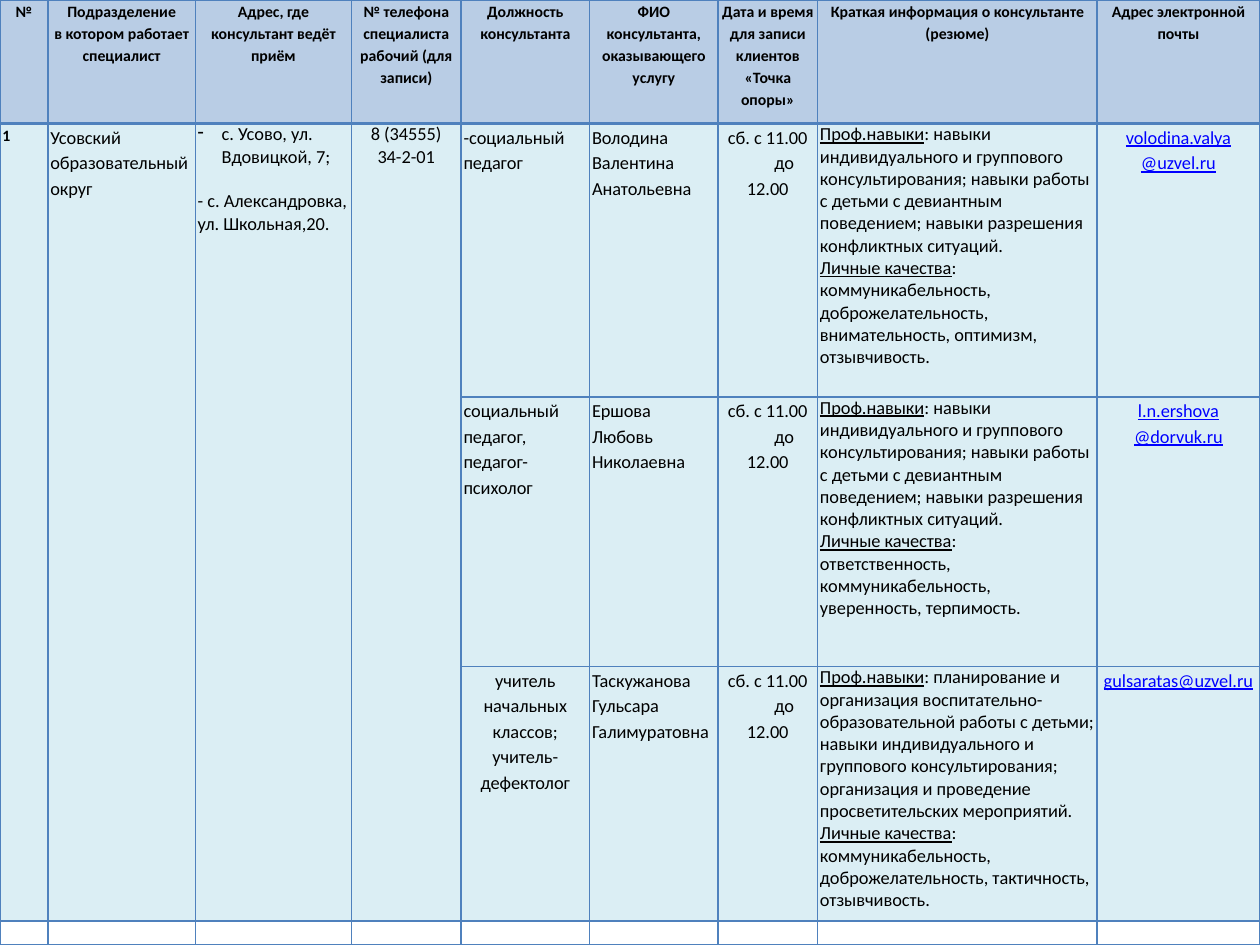
"""Build a slide with a table of consultants of an educational district."""
from dataclasses import dataclass, replace

from lxml.etree import SubElement
from pptx import Presentation
from pptx.dml.color import RGBColor
from pptx.enum.text import PP_ALIGN as Align
from pptx.oxml.ns import qn
from pptx.util import Inches, Pt

COLUMN_SHARES = (0.038, 0.117, 0.124, 0.087, 0.102, 0.102, 0.079, 0.222, 0.129)
ROW_SHARES = (0.98 / 7.5, 2.17 / 7.5, 2.14 / 7.5, 2.02 / 7.5, 0.19 / 7.5)
LINE, HEADER_FILL, BODY_FILL, EMPTY_FILL = "4F81BD", "B9CDE5", "DBEEF4", "FFFFFF"
BLACK, LINK = "000000", "0000FF"
SHARED_COLUMNS = 4


@dataclass(frozen=True)
class Line:
    text: str = ""
    label: str = ""
    align: Align = Align.LEFT
    spacing: float = 1.15
    size: float = 10.5
    bold: bool = False
    color: str = BLACK
    underline: bool = False
    bullet: str = ""
    indent: float = 0
    before: float = 0


@dataclass(frozen=True)
class Consultant:
    position: str
    name: str
    skills: str
    qualities: str
    email: tuple[str, ...]
    position_align: Align = Align.LEFT


HEADERS = (
    ("№",),
    ("Подразделение", "в котором работает специалист"),
    ("Адрес, где консультант ведёт приём",),
    ("№ телефона специалиста", "рабочий (для записи)"),
    ("Должность", "консультанта"),
    ("ФИО консультанта,", "оказывающего услугу"),
    ("Дата и время для записи клиентов", "«Точка опоры»"),
    ("Краткая информация о консультанте (резюме)",),
    ("Адрес электронной почты",),
)
COUNSELLING = (
    "навыки индивидуального и группового консультирования; навыки работы с детьми "
    "с девиантным поведением; навыки разрешения конфликтных ситуаций."
)
CONSULTANTS = (
    Consultant(
        "-социальный педагог", "Володина Валентина Анатольевна", COUNSELLING,
        "коммуникабельность, доброжелательность, внимательность, оптимизм, отзывчивость.",
        ("volodina.valya", "@uzvel.ru"),
    ),
    Consultant(
        "социальный педагог, педагог-психолог", "Ершова Любовь Николаевна", COUNSELLING,
        "ответственность, коммуникабельность, уверенность, терпимость.",
        ("l.n.ershova", "@dorvuk.ru"),
    ),
    Consultant(
        "учитель начальных классов; учитель-дефектолог", "Таскужанова Гульсара Галимуратовна",
        "планирование и организация воспитательно-образовательной работы с детьми; навыки "
        "индивидуального и группового консультирования; организация и проведение "
        "просветительских мероприятий.",
        "коммуникабельность, доброжелательность, тактичность, отзывчивость.",
        ("gulsaratas@uzvel.ru",), Align.CENTER,
    ),
)
CENTERED = Line(align=Align.CENTER)
PLAIN = Line(spacing=1.0)
DISTRICT = (
    (Line("1", size=9, bold=True),),
    (Line("Усовский образовательный округ"),),
    (
        replace(PLAIN, text="с. Усово, ул. Вдовицкой, 7;", bullet="-", indent=0.19),
        replace(PLAIN, text="- с. Александровка, ул. Школьная,20.", before=12.8),
    ),
    tuple(replace(PLAIN, text=text, align=Align.CENTER) for text in ("8 (34555)", "34-2-01")),
)
HOURS = (
    replace(CENTERED, text="сб. с 11.00"),
    replace(CENTERED, text="до", indent=0.26),
    replace(CENTERED, text="12.00"),
)


def rgb(value: str) -> RGBColor:
    """Return the colour for a hex string."""
    return RGBColor.from_string(value)


def style_cell(cell, fill: str, bottom: int = 1) -> None:
    """Set margins, borders and fill of a cell."""
    cell.margin_left = cell.margin_right = Inches(0.02)
    cell.margin_top = cell.margin_bottom = 0
    properties = cell._tc.get_or_add_tcPr()
    for side, width in (("L", 1), ("R", 1), ("T", 1), ("B", bottom)):
        border = SubElement(properties, qn(f"a:ln{side}"), w=str(Pt(width)))
        SubElement(SubElement(border, qn("a:solidFill")), qn("a:srgbClr"), val=LINE)
    cell.fill.solid()
    cell.fill.fore_color.rgb = rgb(fill)


def write_line(para, line: Line) -> None:
    """Format one paragraph and write its text."""
    properties = para._p.get_or_add_pPr()
    if line.indent:
        properties.set("marL", str(Inches(line.indent)))
    if line.bullet:
        properties.set("indent", str(-Inches(line.indent)))
        SubElement(properties, qn("a:buChar"), char=line.bullet)
    para.alignment, para.line_spacing = line.align, line.spacing
    if line.before:
        para.space_before = Pt(line.before)
    font = para.font
    font.name, font.size, font.bold = "Calibri", Pt(line.size), line.bold
    font.color.rgb, font.underline = rgb(line.color), line.underline
    if line.label:
        span = para.add_run()
        span.text, span.font.underline = line.label, True
    if line.text:
        para.add_run().text = line.text


def write_cell(cell, lines: tuple[Line, ...]) -> None:
    """Write lines into a cell, one paragraph each."""
    frame = cell.text_frame
    for index, line in enumerate(lines):
        write_line(frame.add_paragraph() if index else frame.paragraphs[0], line)


def consultant_cells(person: Consultant) -> tuple[tuple[Line, ...], ...]:
    """Return the five cells that describe one consultant."""
    return (
        (Line(person.position, align=person.position_align),),
        (Line(person.name),),
        HOURS,
        (
            replace(PLAIN, label="Проф.навыки", text=f": {person.skills}"),
            replace(PLAIN, label="Личные качества", text=":"),
            replace(PLAIN, text=person.qualities),
        ),
        tuple(replace(CENTERED, text=part, color=LINK, underline=True) for part in person.email),
    )


def add_consultant_table(deck, page) -> None:
    """Add the table that covers the whole page."""
    rows, columns = len(ROW_SHARES), len(COLUMN_SHARES)
    table = page.shapes.add_table(rows, columns, 0, 0, deck.slide_width, deck.slide_height).table
    table.first_row = table.horz_banding = False
    for column, share in zip(table.columns, COLUMN_SHARES):
        column.width = int(deck.slide_width * share)
    for row, share in zip(table.rows, ROW_SHARES):
        row.height = int(deck.slide_height * share)
    fills = (HEADER_FILL, *[BODY_FILL] * len(CONSULTANTS), EMPTY_FILL)
    for row, fill in zip(table.rows, fills):
        for cell in row.cells:
            style_cell(cell, fill, bottom=2 if fill == HEADER_FILL else 1)
    for column, texts in enumerate(HEADERS):
        heading = replace(CENTERED, size=9, bold=True)
        write_cell(table.cell(0, column), tuple(replace(heading, text=text) for text in texts))
        write_cell(table.cell(rows - 1, column), (replace(PLAIN, size=9),))
    for column, lines in enumerate(DISTRICT):
        table.cell(1, column).merge(table.cell(len(CONSULTANTS), column))
        write_cell(table.cell(1, column), lines)
    for row, person in enumerate(CONSULTANTS, start=1):
        for column, lines in enumerate(consultant_cells(person), start=SHARED_COLUMNS):
            write_cell(table.cell(row, column), lines)


def main() -> None:
    """Create and save the deck."""
    deck = Presentation()
    deck.slide_width, deck.slide_height = Inches(10), Inches(7.5)
    page = deck.slides.add_slide(deck.slide_layouts[6])
    add_consultant_table(deck, page)
    deck.save("out.pptx")


if __name__ == "__main__":
    main()
